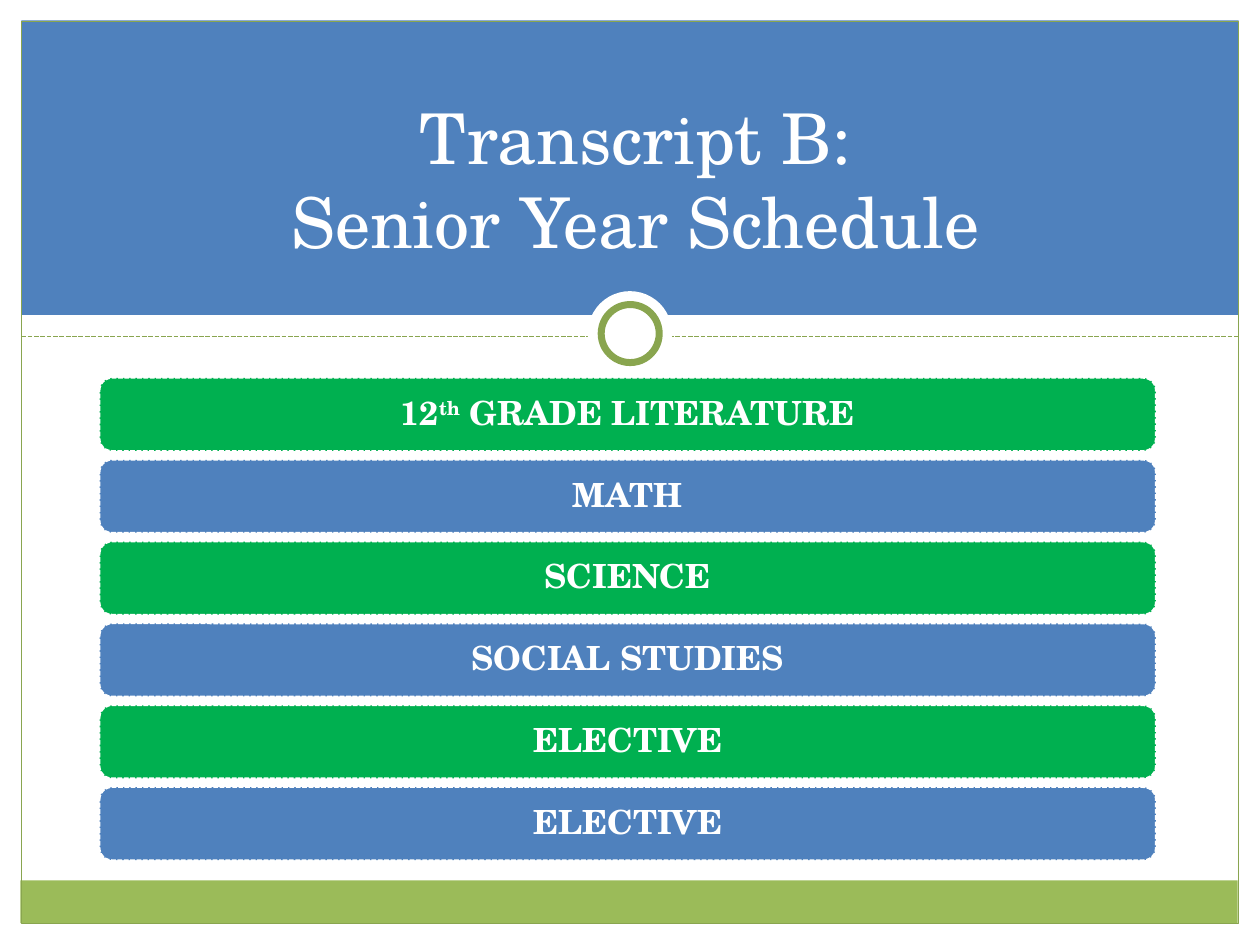
from pptx import Presentation
from pptx.dml.color import RGBColor
from pptx.enum.dml import MSO_LINE
from pptx.enum.shapes import MSO_CONNECTOR, MSO_SHAPE
from pptx.enum.text import MSO_ANCHOR, MSO_AUTO_SIZE, PP_ALIGN
from pptx.oxml.ns import qn
from pptx.util import Cm, Pt
from lxml.etree import SubElement

FONT = "TeX Gyre Schola"
WHITE, BLUE, GREEN = "FFFFFF", "4F81BD", "00B050"
LIME, OLIVE = "9BBB59", "89A54F"
COURSES = [
    [("12", 0), ("th", 30), (" GRADE LITERATURE", 0)],
    [("MATH", 0)],
    [("SCIENCE", 0)],
    [("SOCIAL STUDIES", 0)],
    [("ELECTIVE", 0)],
    [("ELECTIVE", 0)],
]
BAR_TOP, BAR_HEIGHT, BAR_PITCH = 7.62, 1.47, 1.65


def color(value):
    """Turn a hex string into a colour."""
    return RGBColor.from_string(value)


def set_line(line, value, width, dash=None):
    """Format an outline or a connector line."""
    line.color.rgb = color(value)
    line.width = Pt(width)
    if dash:
        line.dash_style = dash


def add_block(page, kind, left, top, width, height, fill=None, line=None,
              line_width=0.75, dash=None):
    """Add a preset shape, sized in centimetres."""
    shape = page.shapes.add_shape(kind, Cm(left), Cm(top), Cm(width), Cm(height))
    shape.shadow.inherit = False
    if fill:
        shape.fill.solid()
        shape.fill.fore_color.rgb = color(fill)
    else:
        shape.fill.background()
    if line:
        set_line(shape.line, line, line_width, dash)
    else:
        shape.line.fill.background()
    return shape


def add_divider(page, left, right, top):
    """Add the dashed horizontal line below the banner."""
    divider = page.shapes.add_connector(
        MSO_CONNECTOR.STRAIGHT, Cm(left), Cm(top), Cm(right), Cm(top))
    set_line(divider.line, OLIVE, 0.9, MSO_LINE.SQUARE_DOT)
    SubElement(divider.element.spPr, qn("a:effectLst"))


def format_span(span, size, bold=False, baseline=0):
    """Set the font of a run, raised by a percentage if asked."""
    span.font.name = FONT
    span.font.size = Pt(size)
    span.font.bold = bold
    span.font.color.rgb = color(WHITE)
    if baseline:
        span.font._element.set("baseline", str(baseline * 1000))


def write_text(para, text, size, bold=False, baseline=0):
    """Append a formatted run to a paragraph."""
    span = para.add_run()
    span.text = text
    format_span(span, size, bold, baseline)


def add_course(page, index, parts):
    """Add one rounded course bar of the schedule."""
    bar = add_block(page, MSO_SHAPE.ROUNDED_RECTANGLE, 2.01,
                    BAR_TOP + index * BAR_PITCH, 21.29, BAR_HEIGHT,
                    fill=BLUE if index % 2 else GREEN, line=WHITE,
                    line_width=0.9, dash=MSO_LINE.SQUARE_DOT)
    bar.adjustments[0] = 0.17
    frame = bar.text_frame
    frame.word_wrap = True
    frame.vertical_anchor = MSO_ANCHOR.MIDDLE
    frame.margin_left = frame.margin_right = Cm(0.25)
    frame.margin_top = frame.margin_bottom = Cm(0.25)
    para = frame.paragraphs[0]
    para.alignment = PP_ALIGN.CENTER
    para.line_spacing = 0.9
    para.space_after = Pt(6.65)
    for text, baseline in parts:
        write_text(para, text, size=19, bold=True, baseline=baseline)


def add_backdrop(page):
    """Draw the banner, footer band, frame, divider and ring."""
    add_block(page, MSO_SHAPE.RECTANGLE, 0.43, 0.41, 24.54, 5.94, fill=BLUE)
    add_block(page, MSO_SHAPE.RECTANGLE, 0.41, 17.75, 24.54, 0.86, fill=LIME)
    add_block(page, MSO_SHAPE.RECTANGLE, 0.43, 0.43, 24.54, 18.19, line=OLIVE)
    add_divider(page, 0.43, 24.97, 6.78)
    add_block(page, MSO_SHAPE.OVAL, 11.85, 5.87, 1.7, 1.7, fill=WHITE)
    add_block(page, MSO_SHAPE.OVAL, 12.12, 6.14, 1.17, 1.17, fill=WHITE,
              line=OLIVE, line_width=4)


def set_title(page, text):
    """Fill the title placeholder and bring it to the front."""
    box = page.shapes.title
    box.left, box.top, box.width, box.height = Cm(2.01), Cm(1.17), Cm(21.59), Cm(4.24)
    frame = box.text_frame
    frame.text = text
    frame.word_wrap = True
    frame.auto_size = MSO_AUTO_SIZE.NONE
    frame.vertical_anchor = MSO_ANCHOR.BOTTOM
    para = frame.paragraphs[0]
    para.alignment = PP_ALIGN.CENTER
    for span in para.runs:
        format_span(span, size=40)
    box.element.getparent().append(box.element)


def main():
    """Build and save the schedule slide."""
    deck = Presentation()
    deck.slide_width, deck.slide_height = Cm(25.4), Cm(19.05)
    page = deck.slides.add_slide(deck.slide_layouts[5])
    add_backdrop(page)
    for index, parts in enumerate(COURSES):
        add_course(page, index, parts)
    set_title(page, "Transcript B:\vSenior Year Schedule")
    deck.save("out.pptx")


if __name__ == "__main__":
    main()
